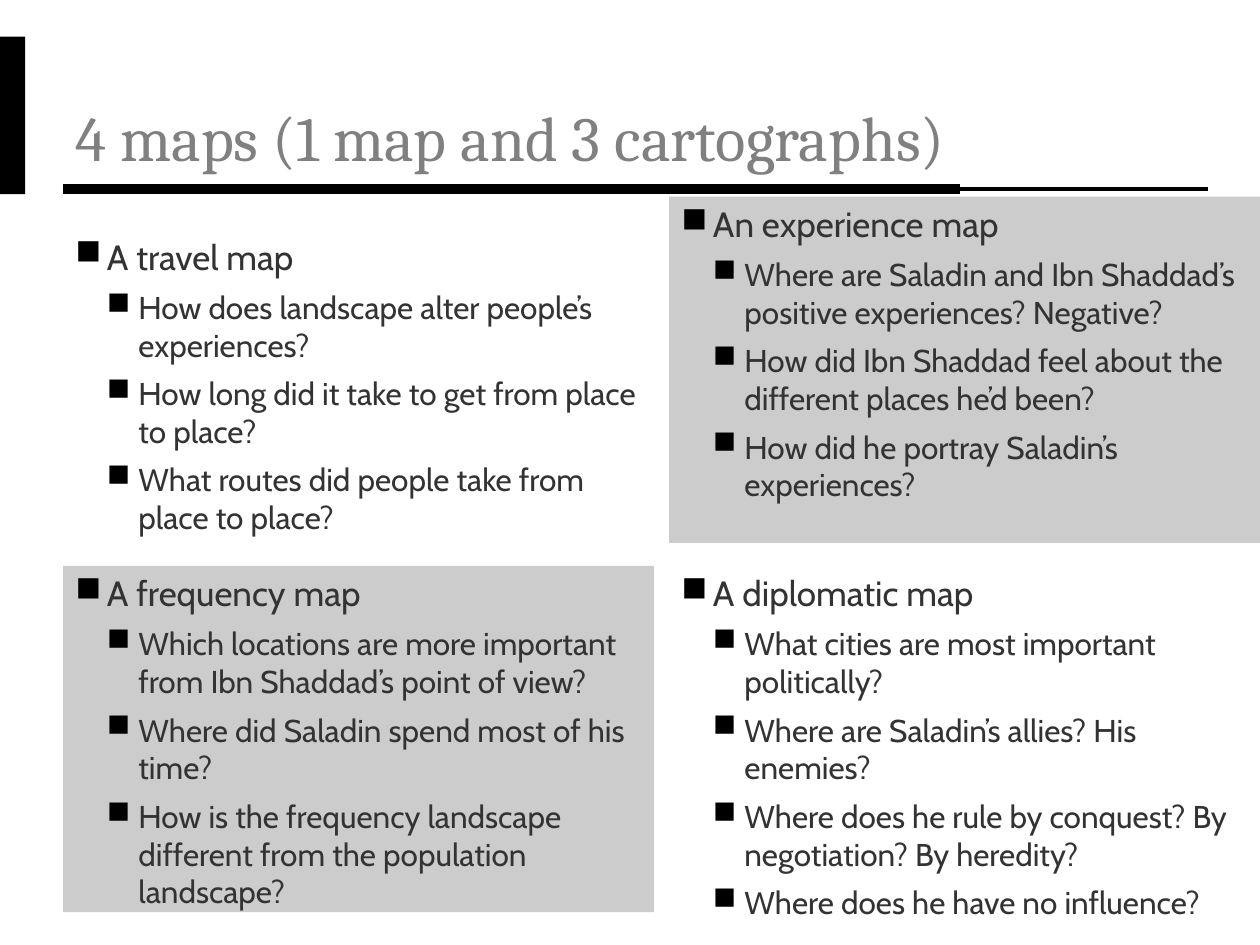
from lxml import etree
from pptx import Presentation
from pptx import util as u
from pptx.dml.color import RGBColor
from pptx.enum import shapes, text
from pptx.oxml.ns import qn

COLORS = {"black": "000000", "title": "808080", "body": "333333", "panel": "CCCCCC"}
TITLE = "4 maps (1 map and 3 cartographs)"
LEFT, RIGHT, WIDTH = 0.5, 5.31, 4.69
PANELS = [
    ("A travel map", (LEFT, 1.82, WIDTH, 2.5), None, [
        "How does landscape alter people’s experiences?",
        "How long did it take to get from place to place?",
        "What routes did people take from place to place?",
    ]),
    ("A frequency map", (LEFT, 4.49, WIDTH, 2.75), "panel", [
        "Which locations are more important from Ibn Shaddad’s point of view?",
        "Where did Saladin spend most of his time?",
        "How is the frequency landscape different from the population landscape?",
    ]),
    ("An experience map", (RIGHT, 1.56, WIDTH, 2.75), "panel", [
        "Where are Saladin and Ibn Shaddad’s positive experiences? Negative?",
        "How did Ibn Shaddad feel about the different places he’d been?",
        "How did he portray Saladin’s experiences?",
    ]),
    ("A diplomatic map", (RIGHT, 4.49, WIDTH, 2.75), None, [
        "What cities are most important politically?",
        "Where are Saladin’s allies? His enemies?",
        "Where does he rule by conquest? By negotiation? By heredity?",
        "Where does he have no influence?",
    ]),
]
RULES = [(9.59, 2), (7.62, 6)]
LEVELS = [
    {"size": 20, "before": 18, "indent": 0.25},
    {"size": 18, "before": 6, "indent": 0.5},
]


def rgb(name):
    return RGBColor.from_string(COLORS[name])


def apply(obj, values):
    for name, value in values.items():
        setattr(obj, name, value)


def inches(box):
    return [u.Inches(v) for v in box]


def add_bullet(p, indent):
    pPr = p._p.get_or_add_pPr()
    pPr.set("marL", str(u.Inches(indent)))
    pPr.set("indent", str(u.Inches(-0.25)))
    color = etree.SubElement(pPr, qn("a:buClr"))
    etree.SubElement(color, qn("a:srgbClr"), val=COLORS["black"])
    etree.SubElement(pPr, qn("a:buChar"), char="■")


def add_line(p, line, level):
    style = LEVELS[level]
    apply(p, {"level": level, "space_before": u.Pt(style["before"])})
    add_bullet(p, style["indent"])
    r = p.add_run()
    r.text = line
    apply(r.font, {"name": "Cabin", "size": u.Pt(style["size"])})
    r.font.color.rgb = rgb("body")


def add_panel(slide, heading, box, fill, questions):
    sp = slide.shapes.add_textbox(*inches(box))
    if fill:
        sp.fill.solid()
        sp.fill.fore_color.rgb = rgb(fill)
    tf = sp.text_frame
    tf.word_wrap = True
    for i, line in enumerate([heading] + questions):
        p = tf.add_paragraph() if i else tf.paragraphs[0]
        add_line(p, line, min(i, 1))


def add_rule(slide, end, weight):
    sp = slide.shapes.add_connector(
        shapes.MSO_CONNECTOR.STRAIGHT, *inches((LEFT, 1.5, end, 1.5)))
    sp.line.width = u.Pt(weight)
    sp.line.color.rgb = rgb("black")
    etree.SubElement(sp._element.spPr, qn("a:effectLst"))


def add_title(slide):
    sp = slide.shapes.title
    left, top, width, height = inches((LEFT, 0.34, 7.12, 1.09))
    apply(sp, {"left": left, "top": top, "width": width, "height": height})
    tf = sp.text_frame
    apply(tf, {"text": TITLE, "word_wrap": True,
               "auto_size": text.MSO_AUTO_SIZE.NONE,
               "vertical_anchor": text.MSO_ANCHOR.BOTTOM})
    p = tf.paragraphs[0]
    p.alignment = text.PP_ALIGN.LEFT
    apply(p.runs[0].font, {"name": "Cambria", "size": u.Pt(36)})
    p.runs[0].font.color.rgb = rgb("title")


def main():
    prs = Presentation()
    apply(prs, {"slide_width": u.Inches(10), "slide_height": u.Inches(7.5)})
    slide = prs.slides.add_slide(prs.slide_layouts[5])
    bar = slide.shapes.add_shape(
        shapes.MSO_SHAPE.RECTANGLE, *inches((0, 0.29, 0.2, 1.25)))
    bar.shadow.inherit = False
    bar.fill.solid()
    bar.fill.fore_color.rgb = rgb("black")
    bar.line.fill.background()
    for rule in RULES:
        add_rule(slide, *rule)
    add_title(slide)
    for panel in PANELS:
        add_panel(slide, *panel)
    prs.save("out.pptx")


if __name__ == "__main__":
    main()
